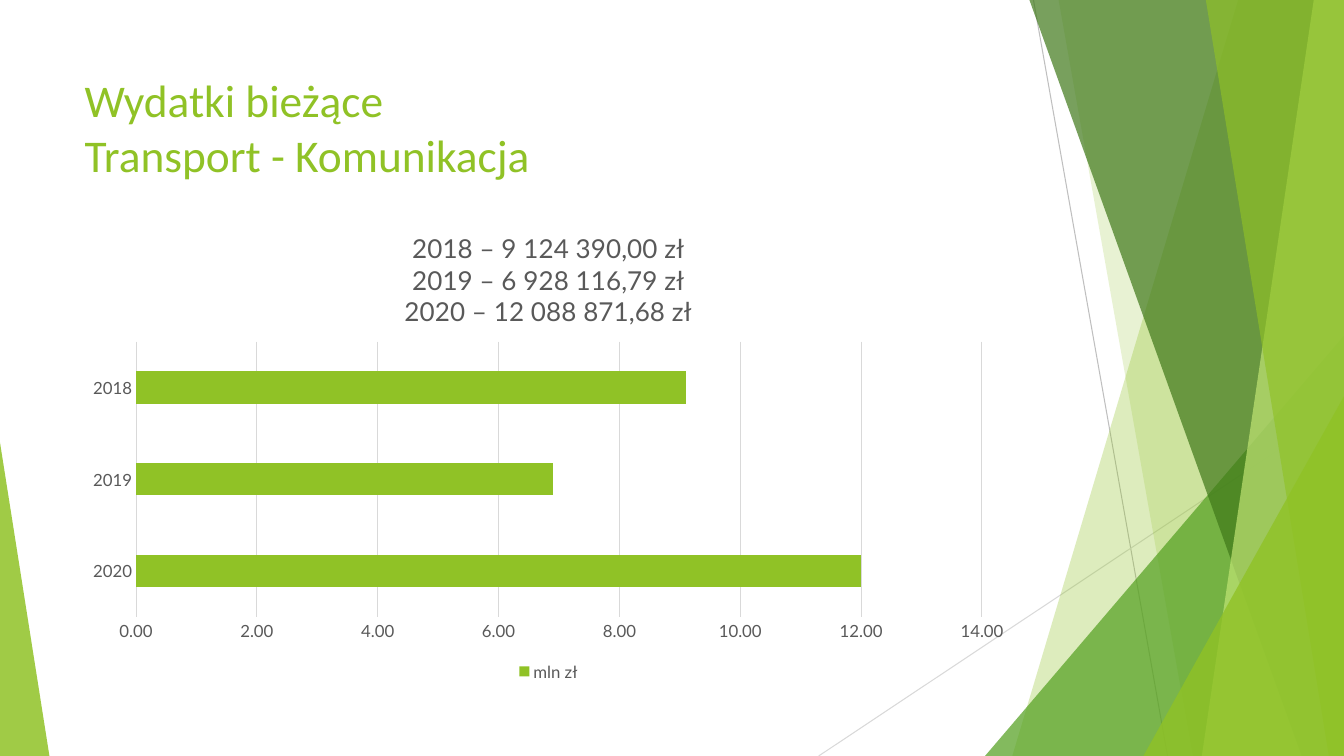
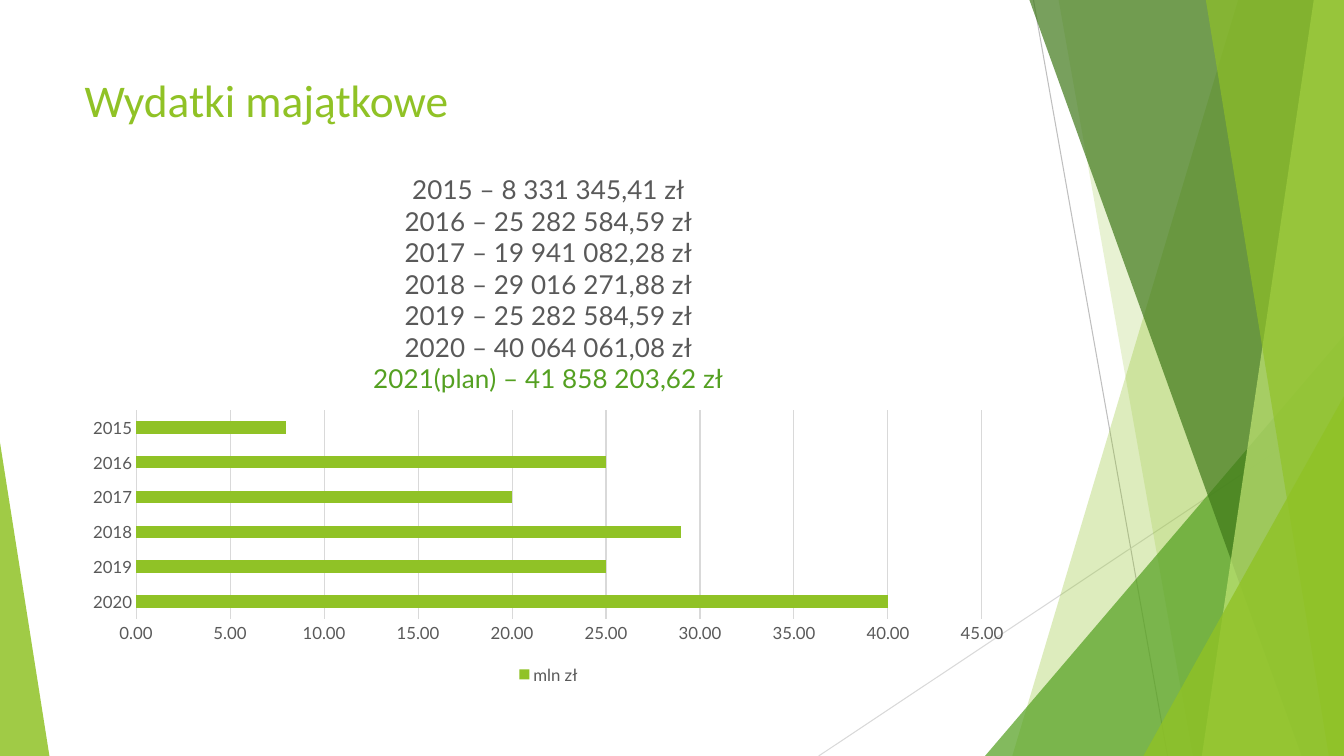
import pptx
import pptx.chart.data
import pptx.dml.color
import pptx.enum.chart
import pptx.enum.shapes
import pptx.enum.text
import pptx.oxml.ns
import pptx.util
from lxml import etree

Inches = pptx.util.Inches
Pt = pptx.util.Pt

COLORS = {
    "lime": "90C226",
    "green": "54A021",
    "forest": "3F7819",
    "pale": "C0E474",
    "text": "595959",
    "grid": "D9D9D9",
    "gray": "BFBFBF",
}
WIDTH, HEIGHT = 13.33, 7.5
LEFT, CONTENT_WIDTH = 0.74, 9.4
PLOT_LEFT, PLOT_WIDTH = 1.35, 8.39


def color(name):
    return pptx.dml.color.RGBColor.from_string(COLORS[name])


def fill_transparent(shape, name, opacity):
    shape.shadow.inherit = False
    shape.line.fill.background()
    shape.fill.solid()
    shape.fill.fore_color.rgb = color(name)
    rgb = shape.element.xpath("./p:spPr/a:solidFill/a:srgbClr")[0]
    alpha = etree.SubElement(rgb, pptx.oxml.ns.qn("a:alpha"))
    alpha.set("val", str(opacity * 1000))


# Colour, opacity and outline of each band
BANDS = [
    ("lime", 30, [(12.28, 0), (WIDTH, 0), (WIDTH, HEIGHT), (10.04, HEIGHT)]),
    ("lime", 20, [(10.5, 0), (WIDTH, 0), (WIDTH, HEIGHT), (11.83, HEIGHT)]),
    ("green", 72, [(WIDTH, 3.33), (WIDTH, HEIGHT), (9.77, HEIGHT)]),
    ("forest", 70, [(10.21, 0), (WIDTH, 0), (WIDTH, HEIGHT), (12.91, HEIGHT)]),
    ("pale", 70, [(13.03, 0), (WIDTH, 0), (WIDTH, HEIGHT), (11.92, HEIGHT)]),
    ("lime", 65, [(11.96, 0), (WIDTH, 0), (WIDTH, HEIGHT), (13.18, HEIGHT)]),
    ("lime", 80, [(WIDTH, 3.93), (WIDTH, HEIGHT), (11.34, HEIGHT)]),
    ("lime", 85, [(0, 4.39), (0.49, HEIGHT), (0, HEIGHT)]),
]
THIN_LINES = [
    ("gray", 10.25, 0, 11.58, HEIGHT),
    ("grid", WIDTH, 4.03, 8.12, HEIGHT),
]
SLIDES = [
    {
        "title": "Wydatki bieżące\nTransport - Komunikacja",
        "title_height": 1.14,
        "chart_top": 2.11, "chart_height": 4.69,
        "plot_top": 3.39, "plot_height": 2.73,
        "maximum": 14, "unit": 2,
        "amounts": ["2018 – 9 124 390,00 zł", "2019 – 6 928 116,79 zł",
                    "2020 – 12 088 871,68 zł"],
        "values": {"2020": 12, "2019": 6.9, "2018": 9.1},
    },
    {
        "title": "Wydatki majątkowe",
        "title_height": 0.64,
        "chart_top": 1.51, "chart_height": 5.32,
        "plot_top": 4.07, "plot_height": 2.07,
        "maximum": 45, "unit": 5,
        "amounts": ["2015 – 8 331 345,41 zł", "2016 – 25 282 584,59 zł",
                    "2017 – 19 941 082,28 zł", "2018 – 29 016 271,88 zł",
                    "2019 – 25 282 584,59 zł", "2020 – 40 064 061,08 zł",
                    "2021(plan) – 41 858 203,62 zł"],
        "values": {"2020": 40, "2019": 25, "2018": 29,
                   "2017": 20, "2016": 25, "2015": 8},
    },
]

presentation = pptx.Presentation()
presentation.slide_width = Inches(WIDTH)
presentation.slide_height = Inches(HEIGHT)
layout = presentation.slide_layouts[5]
slides = [presentation.slides.add_slide(layout) for _ in SLIDES]

# Shared decoration: drawn once, then moved to the layout
decoration = []
for name, x1, y1, x2, y2 in THIN_LINES:
    connector = slides[0].shapes.add_connector(
        pptx.enum.shapes.MSO_CONNECTOR.STRAIGHT,
        Inches(x1), Inches(y1), Inches(x2), Inches(y2))
    connector.line.color.rgb = color(name)
    connector.line.width = Pt(0.75)
    properties = connector.element.xpath("./p:spPr")[0]
    etree.SubElement(properties, pptx.oxml.ns.qn("a:effectLst"))
    decoration.append(connector)

for name, opacity, points in BANDS:
    corners = [(Inches(x), Inches(y)) for x, y in points]
    if len(corners) == 3:
        left, top = (min(values) for values in zip(*corners))
        right, bottom = (max(values) for values in zip(*corners))
        band = slides[0].shapes.add_shape(
            pptx.enum.shapes.MSO_SHAPE.ISOSCELES_TRIANGLE,
            left, top, right - left, bottom - top)
        band.adjustments[0] = 0 if left == 0 else 1
    else:
        builder = slides[0].shapes.build_freeform(*corners[0])
        builder.add_line_segments(corners[1:], close=True)
        band = builder.convert_to_shape()
    fill_transparent(band, name, opacity)
    decoration.append(band)

for number, shape in enumerate(decoration, start=100):
    shape.element.xpath(".//p:cNvPr")[0].set("id", str(number))
    layout.shapes.element.append(shape.element)

for slide, content in zip(slides, SLIDES):
    # Title
    title = slide.shapes.title
    title.left, title.top = Inches(LEFT), Inches(0.67)
    title.width, title.height = Inches(CONTENT_WIDTH), Inches(content["title_height"])
    title.text_frame.text = content["title"]
    title.text_frame.auto_size = pptx.enum.text.MSO_AUTO_SIZE.NONE
    title.text_frame.vertical_anchor = pptx.enum.text.MSO_ANCHOR.TOP
    for paragraph in title.text_frame.paragraphs:
        paragraph.alignment = pptx.enum.text.PP_ALIGN.LEFT
        for run in paragraph.runs:
            run.font.name = "Calibri"
            run.font.size = Pt(32.4)
            run.font.color.rgb = color("lime")

    # Chart
    chart_data = pptx.chart.data.CategoryChartData(number_format="#,##0.00")
    chart_data.categories = list(content["values"])
    chart_data.add_series("mln zł", list(content["values"].values()))
    chart = slide.shapes.add_chart(
        pptx.enum.chart.XL_CHART_TYPE.BAR_CLUSTERED,
        Inches(LEFT), Inches(content["chart_top"]),
        Inches(CONTENT_WIDTH), Inches(content["chart_height"]), chart_data).chart
    chart.font.name = "Lato"
    chart.font.size = Pt(12)
    chart.font.color.rgb = color("text")
    plot = chart.plots[0]
    plot.gap_width = 182
    plot.vary_by_categories = False
    series_fill = plot.series[0].format.fill
    series_fill.solid()
    series_fill.fore_color.rgb = color("lime")

    # Axes and legend
    for axis in (chart.category_axis, chart.value_axis):
        axis.major_tick_mark = pptx.enum.chart.XL_TICK_MARK.NONE
        axis.minor_tick_mark = pptx.enum.chart.XL_TICK_MARK.NONE
    value_axis = chart.value_axis
    value_axis.minimum_scale = 0
    value_axis.maximum_scale = content["maximum"]
    value_axis.major_unit = content["unit"]
    value_axis.tick_labels.number_format = "#,##0.00"
    value_axis.tick_labels.number_format_is_linked = False
    value_axis.format.line.fill.background()
    value_axis.has_major_gridlines = True
    for line in (chart.category_axis.format.line, value_axis.major_gridlines.format.line):
        line.color.rgb = color("grid")
        line.width = Pt(0.75)
    chart.has_legend = True
    chart.legend.position = pptx.enum.chart.XL_LEGEND_POSITION.BOTTOM
    chart.legend.include_in_layout = False

    # Yearly amounts as the chart title
    chart.has_title = True
    chart.chart_title.include_in_layout = False
    text_frame = chart.chart_title.text_frame
    text_frame.text = "\n".join(content["amounts"])
    for paragraph in text_frame.paragraphs:
        planned = "plan" in paragraph.text
        for run in paragraph.runs:
            run.font.name = "Lato"
            run.font.size = Pt(18.6)
            run.font.bold = False
            run.font.color.rgb = color("green" if planned else "text")

    # Fixed plot area, as fractions of the chart frame
    plot_area = chart.element.xpath("./c:chart/c:plotArea")[0]
    for old_layout in plot_area.xpath("./c:layout"):
        plot_area.remove(old_layout)
    plot_layout = etree.Element(pptx.oxml.ns.qn("c:layout"))
    plot_area.insert(0, plot_layout)
    manual = etree.SubElement(plot_layout, pptx.oxml.ns.qn("c:manualLayout"))
    settings = {
        "layoutTarget": "inner", "xMode": "edge", "yMode": "edge",
        "x": (PLOT_LEFT - LEFT) / CONTENT_WIDTH,
        "y": (content["plot_top"] - content["chart_top"]) / content["chart_height"],
        "w": PLOT_WIDTH / CONTENT_WIDTH,
        "h": content["plot_height"] / content["chart_height"],
    }
    for tag, value in settings.items():
        etree.SubElement(manual, pptx.oxml.ns.qn("c:" + tag)).set("val", str(value))

presentation.save("out.pptx")
